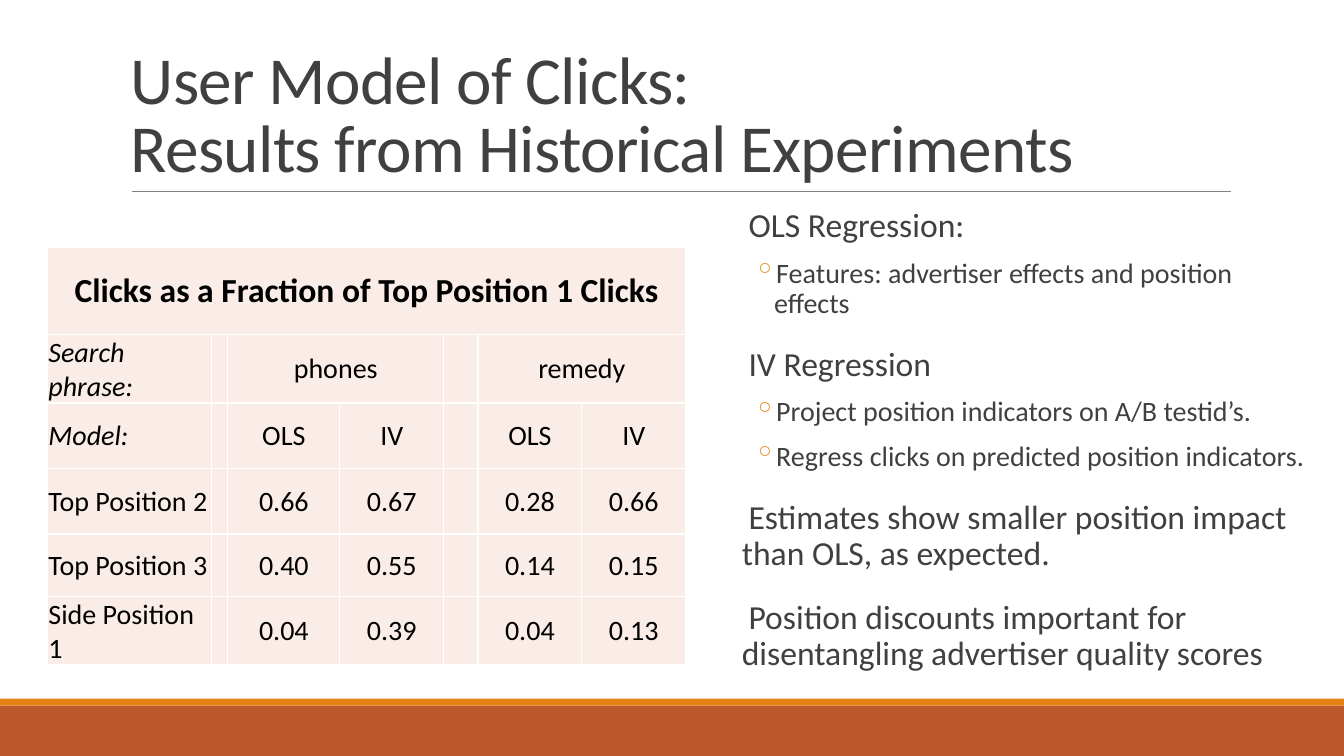
from lxml import etree
from pptx import Presentation
from pptx import util as u
from pptx.dml.color import RGBColor
from pptx.enum import shapes, text
from pptx.oxml.ns import qn

RUST = RGBColor(0xBD, 0x58, 0x2C)
ORANGE = RGBColor(0xE4, 0x83, 0x12)
GRAY = RGBColor(0x80, 0x80, 0x80)
CHARCOAL = RGBColor(0x40, 0x40, 0x40)
BLACK = RGBColor(0, 0, 0)
WHITE = RGBColor(0xFF, 0xFF, 0xFF)
BLUSH = RGBColor(0xFA, 0xED, 0xE7)

deck = Presentation()
deck.slide_width, deck.slide_height = u.Inches(13.33), u.Inches(7.5)
slide = deck.slides.add_slide(deck.slide_layouts[6])


def share(*percents):
    sides = (deck.slide_width, deck.slide_height) * 2
    return [round(side * p / 100) for side, p in zip(sides, percents)]


def write(paragraph, words, **formats):
    run = paragraph.add_run()
    run.text = words
    color = formats.pop("color")
    for name, value in {"name": "Calibri", **formats}.items():
        setattr(run.font, name, value)
    run.font.color.rgb = color
    return run


for top, height, color in [(93.33, 6.67, RUST), (92.4, 0.93, ORANGE)]:
    band = slide.shapes.add_shape(shapes.MSO_SHAPE.RECTANGLE, *share(0, top, 100, height))
    band.shadow.inherit = False
    band.fill.solid()
    band.fill.fore_color.rgb = color
    band.line.fill.background()

divider = slide.shapes.add_connector(
    shapes.MSO_CONNECTOR.STRAIGHT, *share(9.83, 25.33, 91.6, 25.33))
divider.line.color.rgb = GRAY
divider.line.width = u.Pt(0.5)
etree.SubElement(divider.element.spPr, qn("a:effectLst"))

heading = slide.shapes.add_textbox(*share(9, 4.13, 82.5, 21.2)).text_frame
heading.word_wrap = True
heading.vertical_anchor = text.MSO_ANCHOR.BOTTOM
heading_lines = heading.paragraphs[0]
heading_lines.line_spacing = 0.85
for part in ["User Model of Clicks: ", "Results from Historical Experiments"]:
    if heading_lines.runs:
        heading_lines.add_line_break()
    title_run = write(heading_lines, part, size=u.Pt(48), color=CHARCOAL)
    title_run.font._element.set("spc", "-50")

column_shares = [12.23, 1.2, 8.33, 7.73, 2.55, 7.73, 7.73]
row_shares = [11.6, 8.27, 8.67, 8.67, 8.27, 8.27]
click_rows = [
    ["Clicks as a Fraction of Top Position 1 Clicks", "", "", "", "", "", ""],
    ["Search phrase:", "", "phones", "", "", "remedy", ""],
    ["Model:", "", "OLS", "IV", "", "OLS", "IV"],
    ["Top Position 2", "", "0.66", "0.67", "", "0.28", "0.66"],
    ["Top Position 3", "", "0.40", "0.55", "", "0.14", "0.15"],
    ["Side Position 1", "", "0.04", "0.39", "", "0.04", "0.13"],
]
clicks = slide.shapes.add_table(
    len(row_shares), len(column_shares),
    *share(3.53, 32.67, sum(column_shares), sum(row_shares))).table
clicks.first_row = clicks.horz_banding = False
for column, width in zip(clicks.columns, column_shares):
    column.width = share(width)[0]
for row, height in zip(clicks.rows, row_shares):
    row.height = share(0, height)[1]
for row, first, last in [(0, 0, 6), (1, 2, 3), (1, 5, 6)]:
    clicks.cell(row, first).merge(clicks.cell(row, last))

cell_format = {
    "margin_left": u.Inches(0.01), "margin_right": u.Inches(0.01),
    "margin_top": u.Inches(0.01), "margin_bottom": 0,
    "vertical_anchor": text.MSO_ANCHOR.MIDDLE,
}
for r, entries in enumerate(click_rows):
    for c, entry in enumerate(entries):
        cell = clicks.cell(r, c)
        for name, value in cell_format.items():
            setattr(cell, name, value)
        cell.fill.solid()
        cell.fill.fore_color.rgb = BLUSH
        properties = cell._tc.get_or_add_tcPr()
        for place, side in enumerate(["lnL", "lnR", "lnT", "lnB"]):
            border = etree.Element(qn("a:" + side), w=str(u.Pt(1)))
            paint = etree.SubElement(border, qn("a:solidFill"))
            etree.SubElement(paint, qn("a:srgbClr"), val=str(WHITE))
            properties.insert(place, border)
        if entry:
            line = cell.text_frame.paragraphs[0]
            centered = r == 0 or c > 0
            line.alignment = text.PP_ALIGN.CENTER if centered else text.PP_ALIGN.LEFT
            write(line, entry, size=u.Pt(20 if r else 24), bold=r == 0,
                  italic=c == 0 and r in (1, 2), color=BLACK)

findings = [
    (0, "OLS Regression:"),
    (1, "Features: advertiser effects and position effects"),
    (0, "IV Regression"),
    (1, "Project position indicators on A/B testid’s."),
    (1, "Regress clicks on predicted position indicators."),
    (0, "Estimates show smaller position impact than OLS, as expected."),
    (0, "Position discounts important for disentangling advertiser quality scores"),
]
levels = [
    {"size": 24, "before": 12, "margin": 0.1, "hang": -0.1, "bullet": " "},
    {"size": 20, "before": 2, "margin": 0.42, "hang": -0.2, "bullet": "◦"},
]
notes = slide.shapes.add_textbox(*share(54.45, 26.93, 42.75, 58.67)).text_frame
notes.word_wrap = True
notes.margin_left = notes.margin_right = 0
for i, (level, words) in enumerate(findings):
    style = levels[level]
    point = notes.add_paragraph() if i else notes.paragraphs[0]
    point_format = {
        "level": level, "line_spacing": 0.9,
        "space_before": u.Pt(style["before"]), "space_after": u.Pt(8),
    }
    for name, value in point_format.items():
        setattr(point, name, value)
    layout = point._p.get_or_add_pPr()
    layout.set("marL", str(u.Inches(style["margin"])))
    layout.set("indent", str(u.Inches(style["hang"])))
    bullet_color = etree.SubElement(layout, qn("a:buClr"))
    etree.SubElement(bullet_color, qn("a:srgbClr"), val=str(ORANGE))
    etree.SubElement(layout, qn("a:buChar"), char=style["bullet"])
    write(point, words, size=u.Pt(style["size"]), color=CHARCOAL)

deck.save("out.pptx")
